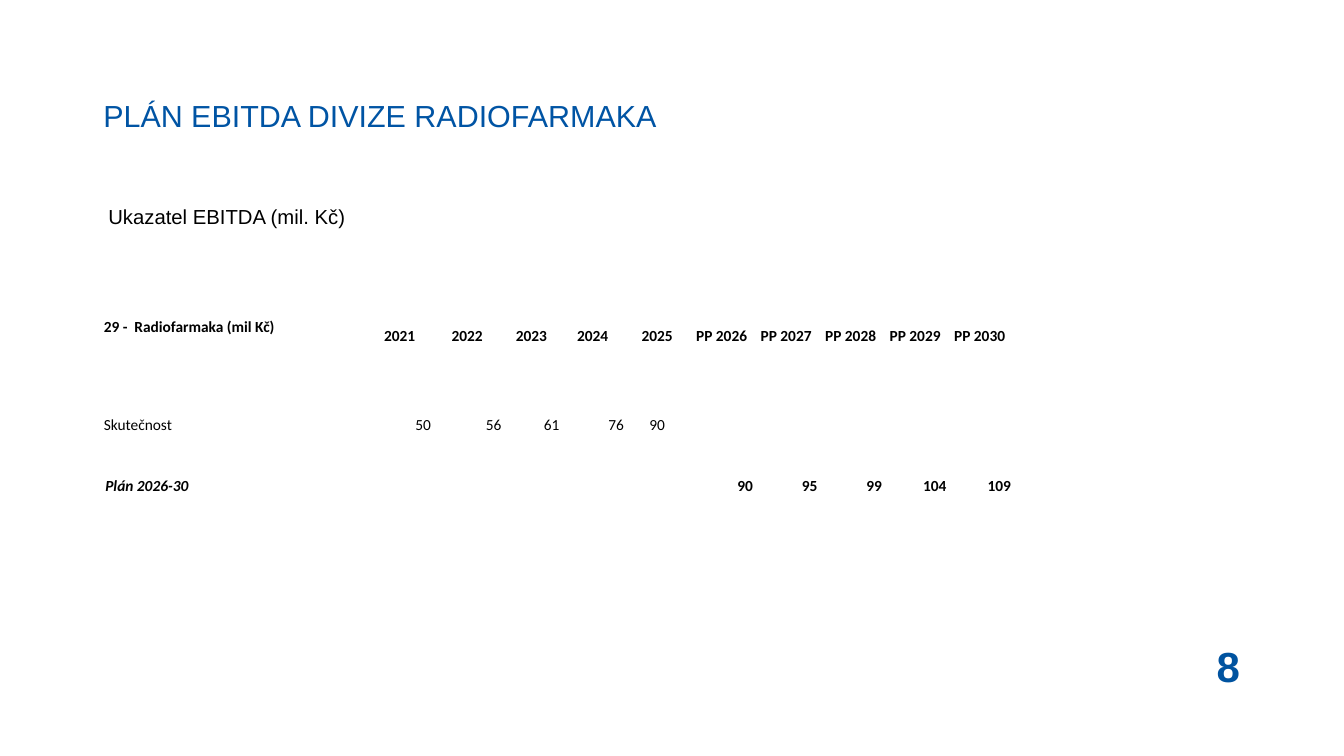
from pptx import Presentation
from pptx.dml.color import RGBColor
from pptx.enum.text import MSO_ANCHOR, PP_ALIGN
from pptx.util import Pt

PX = 9144  # EMU in one px, 100 px to the inch
BLUE = RGBColor(0x00, 0x54, 0xA4)
PAGE_BLUE = RGBColor(0x00, 0x53, 0xA0)
BLACK = RGBColor(0x00, 0x00, 0x00)
LEFT, CENTER, RIGHT = PP_ALIGN.LEFT, PP_ALIGN.CENTER, PP_ALIGN.RIGHT
MIDDLE, TOP = MSO_ANCHOR.MIDDLE, MSO_ANCHOR.TOP

MARGIN = 205
COLUMN_WIDTHS = [524, 128, 140, 115] + [128] * 7
ROW_HEIGHTS = [229, 121, 121]
ACTUAL_YEARS = ["2021", "2022", "2023", "2024", "2025"]
PLAN_YEARS = ["PP 2026", "PP 2027", "PP 2028", "PP 2029", "PP 2030"]
ACTUAL = ["50", "56", "61", "76", "90"]
PLAN = ["90", "95", "99", "104", "109"]


class SlideWriter:
    def __init__(self, slide):
        self.slide = slide
        self.heading_font = "Arial"
        self.table_font = "Calibri"
        self.table_size = 22

    def format_runs(self, para, font, size, color, bold=False, italic=False):
        for run in para.runs:
            run.font.name = font
            run.font.size = Pt(size)
            run.font.color.rgb = color
            run.font.bold = bold
            run.font.italic = italic

    def text(self, left, top, width, height, words, size, color,
             bold=False, align=LEFT, anchor=TOP, inset=True):
        box = self.slide.shapes.add_textbox(
            left * PX, top * PX, width * PX, height * PX)
        frame = box.text_frame
        frame.word_wrap = True
        frame.vertical_anchor = anchor
        if not inset:
            frame.margin_left = frame.margin_right = 0
            frame.margin_top = frame.margin_bottom = 0
        frame.text = words
        para = frame.paragraphs[0]
        para.alignment = align
        self.format_runs(para, self.heading_font, size, color, bold)

    def table(self, left, top, widths, heights):
        """Add a plain table without fills or banding."""
        table = self.slide.shapes.add_table(
            len(heights), len(widths), left * PX, top * PX,
            sum(widths) * PX, sum(heights) * PX).table
        table.first_row = table.horz_banding = False
        for column, width in zip(table.columns, widths):
            column.width = width * PX
        for row, height in zip(table.rows, heights):
            row.height = height * PX
        for cell in table.iter_cells():
            cell.fill.background()
            cell.vertical_anchor = MIDDLE
            cell.margin_left = cell.margin_right = cell.margin_top = PX
            cell.margin_bottom = 0
        return table

    def cell(self, cell, words, align=LEFT, bold=False, italic=False):
        cell.text = words
        if align == RIGHT:
            cell.margin_left = cell.margin_right = cell.margin_top = 2 * PX
        para = cell.text_frame.paragraphs[0]
        para.alignment = align
        self.format_runs(para, self.table_font, self.table_size, BLACK,
                         bold, italic)


def main():
    deck = Presentation()
    deck.slide_width, deck.slide_height = 2667 * PX, 1500 * PX
    writer = SlideWriter(deck.slides.add_slide(deck.slide_layouts[6]))

    writer.text(MARGIN, 150, 1686, 157, "PLÁN EBITDA DIVIZE RADIOFARMAKA",
                43.5, BLUE, anchor=MIDDLE, inset=False)
    writer.text(2335, 1265, 205, 95, "8", 60, PAGE_BLUE, bold=True,
                align=CENTER)
    writer.text(MARGIN, 400, 1528, 59, "Ukazatel EBITDA (mil. Kč)", 29, BLACK)

    table = writer.table(MARGIN, 553, COLUMN_WIDTHS, ROW_HEIGHTS)
    heading, actual_label, plan_label = [table.cell(row, 0) for row in range(3)]
    writer.cell(heading, "29 -  Radiofarmaka (mil Kč)", bold=True)
    heading.margin_bottom = 36 * PX  # lifts the heading above the years
    writer.cell(actual_label, "Skutečnost")
    writer.cell(plan_label, "Plán 2026-30", bold=True, italic=True)
    plan_label.margin_left = 4 * PX

    for column, year in enumerate(ACTUAL_YEARS + PLAN_YEARS, start=1):
        writer.cell(table.cell(0, column), year, CENTER, bold=True)
    for column, value in enumerate(ACTUAL, start=1):
        align = CENTER if column == len(ACTUAL) else RIGHT
        writer.cell(table.cell(1, column), value, align)
    for column, value in enumerate(PLAN, start=1 + len(ACTUAL)):
        writer.cell(table.cell(2, column), value, RIGHT, bold=True)

    deck.save("out.pptx")


if __name__ == "__main__":
    main()
